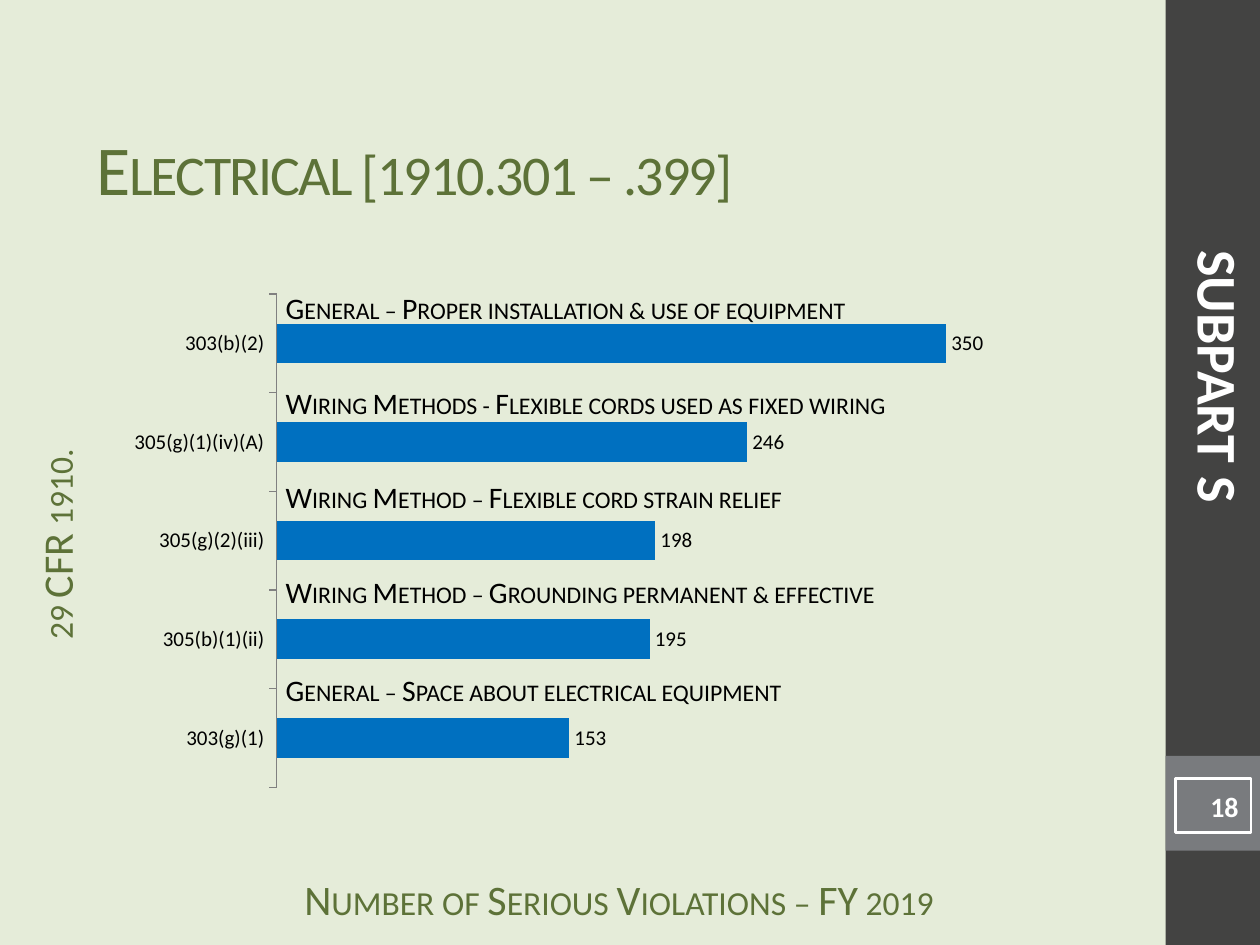
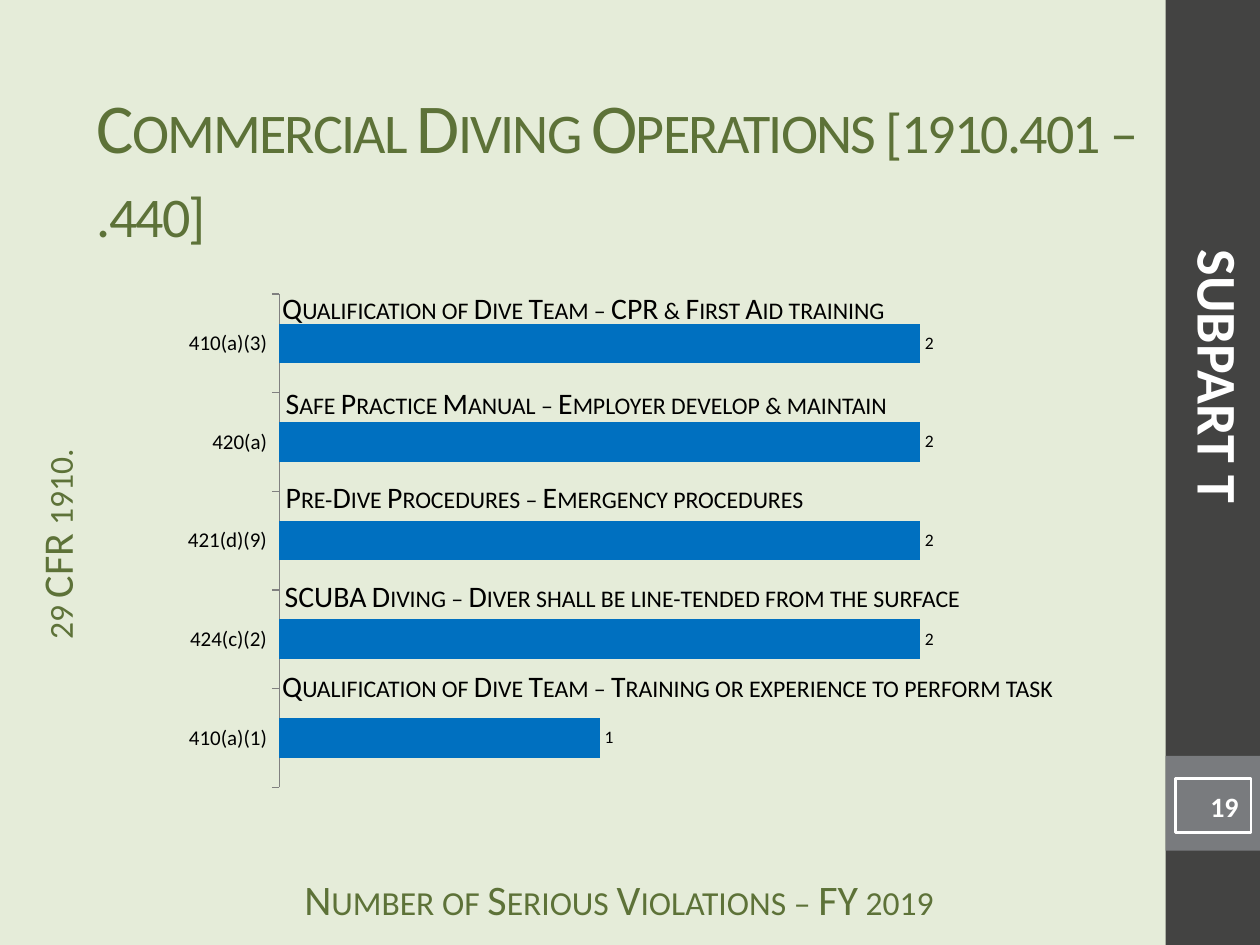
import pptx
import pptx.util
import pptx.chart.data
import pptx.dml.color
import pptx.enum.chart
import pptx.enum.shapes
import pptx.enum.text
import pptx.oxml
import pptx.oxml.ns

Cm, Pt = pptx.util.Cm, pptx.util.Pt
ALIGN = pptx.enum.text.PP_ALIGN
ANCHOR = pptx.enum.text.MSO_ANCHOR
RECTANGLE = pptx.enum.shapes.MSO_SHAPE.RECTANGLE
FONT = "Calibri"
COLORS = {name: pptx.dml.color.RGBColor.from_string(value) for name, value in {
    "background": "E5ECD9", "sidebar": "434342", "number_band": "797B7E",
    "heading": "5D7238", "bar": "0070C0", "axis": "808080",
    "black": "000000", "white": "FFFFFF"}.items()}

# Each caption: text, left, top, width in cm, from the top bar down
SUBPARTS = [
    {"letter": "S", "number": "18", "title": "Electrical [1910.301 – .399]",
     "chart_left": 2.34, "chart_width": 19.05, "plot_x": 0.17, "plot_w": 0.81,
     "axis_max": 400, "label_size": 12,
     "violations": {"303(g)(1)": 153, "305(b)(1)(ii)": 195, "305(g)(2)(iii)": 198,
                    "305(g)(1)(iv)(A)": 246, "303(b)(2)": 350},
     "captions": [
         ("General – Proper installation & use of equipment", 5.51, 5.72, 12.32),
         ("Wiring Methods - Flexible cords used as fixed wiring", 5.51, 7.62, 13.54),
         ("Wiring Method – Flexible cord strain relief", 5.51, 9.53, 10.85),
         ("Wiring Method – Grounding permanent & effective", 5.51, 11.43, 13.34),
         ("General – Space about electrical equipment", 5.51, 13.41, 12.42)]},
    {"letter": "T", "number": "19",
     "title": "Commercial Diving Operations [1910.401 – .440]",
     "chart_left": 3.38, "chart_width": 18.77, "plot_x": 0.12, "plot_w": 0.86,
     "axis_max": 2.5, "label_size": 10,
     "violations": {"410(a)(1)": 1, "424(c)(2)": 2, "421(d)(9)": 2,
                    "420(a)": 2, "410(a)(3)": 2},
     "captions": [
         ("Qualification of Dive Team – CPR & First Aid training", 5.44, 5.72, 18.49),
         ("Safe Practice Manual – Employer develop & maintain", 5.51, 7.62, 17.78),
         ("Pre-Dive Procedures – Emergency procedures", 5.51, 9.53, 16.31),
         ("SCUBA Diving – Diver shall be line-tended from the surface", 5.49, 11.51, 15.04),
         ("Qualification of Dive Team – Training or experience to perform task",
          5.44, 13.34, 16.79)]},
]


def add_text(slide, text, box, size=17, color="black", bold=False, align=ALIGN.LEFT,
             anchor=ANCHOR.TOP, small_caps=True, spacing=0, rotation=0,
             inset_top=0.13, outline=None):
    left, top, width, height = map(Cm, box)
    if outline:
        shape = slide.shapes.add_shape(RECTANGLE, left, top, width, height)
        shape.shadow.inherit = False
        shape.fill.background()
        shape.line.color.rgb = COLORS[outline]
        shape.line.width = Pt(1.5)
    else:
        shape = slide.shapes.add_textbox(left, top, width, height)
    shape.rotation = rotation
    frame = shape.text_frame
    frame.word_wrap = True
    frame.vertical_anchor = anchor
    frame.margin_top = Cm(inset_top)
    paragraph = frame.paragraphs[0]
    paragraph.alignment = align
    run = paragraph.add_run()
    run.text = text
    run.font.name, run.font.size, run.font.bold = FONT, Pt(size), bold
    run.font.color.rgb = COLORS[color]
    properties = run._r.get_or_add_rPr()
    if small_caps:
        properties.set("cap", "small")
    if spacing:
        properties.set("spc", str(spacing))


prs = pptx.Presentation()
prs.slide_width, prs.slide_height = Cm(25.4), Cm(19.05)
background = prs.slide_master.background.fill
background.solid()
background.fore_color.rgb = COLORS["background"]

for subpart in SUBPARTS:
    slide = prs.slides.add_slide(prs.slide_layouts[6])

    # Sidebar and the band behind the slide number
    for color, top, height in [("sidebar", 0, 19.05), ("number_band", 15.24, 1.91)]:
        band = slide.shapes.add_shape(RECTANGLE, Cm(23.5), Cm(top), Cm(1.9), Cm(height))
        band.shadow.inherit = False
        band.fill.solid()
        band.fill.fore_color.rgb = COLORS[color]
        band.line.fill.background()

    # Axis headings
    add_text(slide, "Number of Serious Violations – FY 2019", (5.28, 17.6, 14.4, 0.84),
             size=24, color="heading", align=ALIGN.CENTER, inset_top=0)
    add_text(slide, "29 CFR 1910.", (-3.96, 10.24, 10.64, 1.47), size=24,
             color="heading", align=ALIGN.CENTER, inset_top=0, rotation=270)

    # Bar chart
    violations = subpart["violations"]
    data = pptx.chart.data.CategoryChartData()
    data.categories = list(violations)
    data.add_series("Series 1", list(violations.values()))
    chart = slide.shapes.add_chart(
        pptx.enum.chart.XL_CHART_TYPE.BAR_CLUSTERED, Cm(subpart["chart_left"]), Cm(5.72),
        Cm(subpart["chart_width"]), Cm(10.36), data).chart
    chart.has_legend = False
    chart.has_title = False
    chart.font.name, chart.font.size = FONT, Pt(10)
    chart.font.color.rgb = COLORS["black"]

    value_axis = chart.value_axis
    value_axis.visible = False
    value_axis.has_major_gridlines = False
    value_axis.minimum_scale = 0
    value_axis.maximum_scale = subpart["axis_max"]
    category_axis = chart.category_axis
    category_axis.tick_labels.font.size = Pt(12)
    category_axis.major_tick_mark = pptx.enum.chart.XL_TICK_MARK.OUTSIDE
    category_axis.format.line.color.rgb = COLORS["axis"]

    plot = chart.plots[0]
    plot.gap_width = 150
    plot.vary_by_categories = False
    bars = plot.series[0].format.fill
    bars.solid()
    bars.fore_color.rgb = COLORS["bar"]
    plot.has_data_labels = True
    labels = plot.data_labels
    labels.show_value = True
    labels.position = pptx.enum.chart.XL_LABEL_POSITION.OUTSIDE_END
    labels.font.size = Pt(subpart["label_size"])

    # Fixed plot area inside the chart
    plot_area = chart._chartSpace.chart.plotArea
    for old_layout in plot_area.findall(pptx.oxml.ns.qn("c:layout")):
        plot_area.remove(old_layout)
    plot_area.insert(0, pptx.oxml.parse_xml(
        f'<c:layout {pptx.oxml.ns.nsdecls("c")}><c:manualLayout>'
        '<c:layoutTarget val="inner"/><c:xMode val="edge"/><c:yMode val="edge"/>'
        f'<c:x val="{subpart["plot_x"]}"/><c:y val="0.02"/>'
        f'<c:w val="{subpart["plot_w"]}"/><c:h val="0.96"/>'
        '</c:manualLayout></c:layout>'))

    # Title, slide number and subpart name
    add_text(slide, subpart["title"], (1.7, 1.47, 21.74, 3.81), size=40,
             color="heading", anchor=ANCHOR.MIDDLE, spacing=-100)
    add_text(slide, subpart["number"], (23.7, 15.7, 1.52, 1.09), size=16, color="white",
             bold=True, align=ALIGN.RIGHT, anchor=ANCHOR.MIDDLE, small_caps=False,
             outline="white")
    add_text(slide, f"SUBPART {subpart['letter']}", (16.99, 6.78, 15.19, 1.63), size=32,
             color="white", bold=True, align=ALIGN.CENTER, small_caps=False, rotation=90)

    # Captions above the bars
    for caption, left, top, width in subpart["captions"]:
        add_text(slide, caption, (left, top, width, 0.99))

prs.save("out.pptx")
